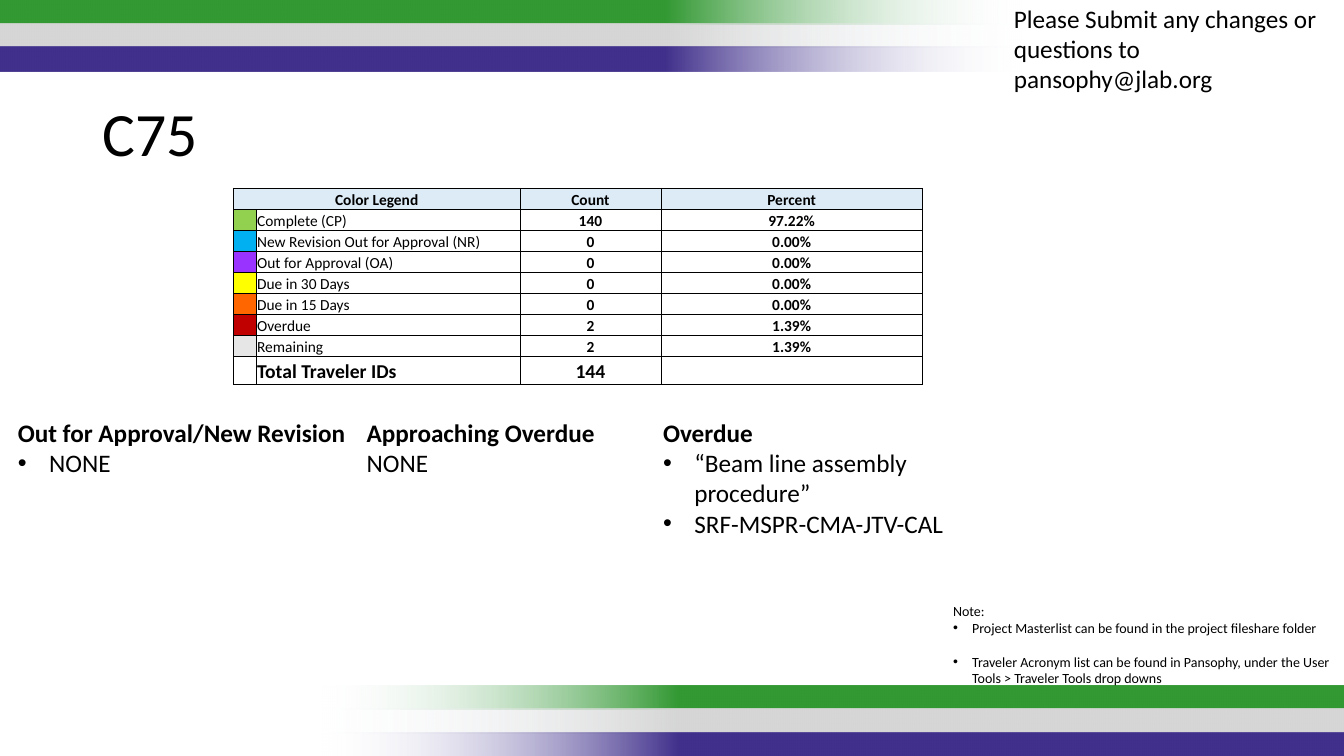
"""Build the C75 traveler status slide."""
from copy import deepcopy
from lxml.etree import SubElement as Sub
from pptx import Presentation
from pptx.dml.color import RGBColor
from pptx.enum.shapes import MSO_SHAPE as Shape
from pptx.enum.text import MSO_ANCHOR as Anchor, MSO_AUTO_SIZE as Auto, PP_ALIGN as Align
from pptx.oxml.ns import qn
from pptx.util import Cm, Pt

BLACK = RGBColor(0x00, 0x00, 0x00)
PALE = RGBColor(0xF7, 0xFA, 0xFD)
GREEN = RGBColor(0x33, 0x99, 0x33)
GREY = RGBColor(0xD6, 0xD6, 0xD6)
INDIGO = RGBColor(0x42, 0x31, 0x8C)
HEAD = RGBColor(0xDD, 0xEB, 0xF7)
LIME = RGBColor(0x92, 0xD0, 0x50)
SKY = RGBColor(0x00, 0xB0, 0xF0)
VIOLET = RGBColor(0x99, 0x33, 0xFF)
YELLOW = RGBColor(0xFF, 0xFF, 0x00)
ORANGE = RGBColor(0xFF, 0x66, 0x00)
RED = RGBColor(0xC0, 0x00, 0x00)
SILVER = RGBColor(0xE7, 0xE6, 0xE6)

LEGEND = [
    (HEAD, "Color Legend", "Count", "Percent"),
    (LIME, "Complete (CP)", "140", "97.22%"),
    (SKY, "New Revision Out for Approval (NR)", "0", "0.00%"),
    (VIOLET, "Out for Approval (OA)", "0", "0.00%"),
    (YELLOW, "Due in 30 Days", "0", "0.00%"),
    (ORANGE, "Due in 15 Days", "0", "0.00%"),
    (RED, "Overdue", "2", "1.39%"),
    (SILVER, "Remaining", "2", "1.39%"),
    (None, "Total Traveler IDs", "144", ""),
]


class Deck:
    """Hold the style and the current slide."""

    font = "Calibri"

    def __init__(self):
        self.prs = Presentation()
        self.prs.slide_width, self.prs.slide_height = Cm(33.87), Cm(19.05)
        self.slide = self.prs.slides.add_slide(self.prs.slide_layouts[6])

    def style(self, para, size, bold=False):
        para.font.name = self.font
        para.font.size = Pt(size)
        para.font.bold = bold
        para.font.color.rgb = BLACK

    def bar(self, left, top, color, turn):
        bar = self.slide.shapes.add_shape(
            Shape.RECTANGLE, Cm(left), Cm(top), Cm(25.83), Cm(0.61))
        bar.shadow.inherit = False
        bar.rotation = turn
        bar.line.fill.background()
        bar.fill.gradient()
        bar.fill.gradient_angle = 0
        for stop, tint, pos in zip(bar.fill.gradient_stops, (PALE, color), (0, 0.35)):
            stop.color.rgb = tint
            stop.position = pos
        fade, solid = bar._element.iter(qn("a:gs"))
        Sub(fade[0], qn("a:alpha"), val="0")
        end = deepcopy(solid)
        end.set("pos", "100000")
        solid.addnext(end)

    def text(self, box, lines, size, dent=0, bold=False, gap=0, grow=True, cols=1):
        """Write lines; those that start with a bullet get a hanging indent."""
        shape = self.slide.shapes.add_textbox(*map(Cm, box))
        frame = shape.text_frame
        frame.word_wrap = True
        if grow:
            frame.auto_size = Auto.SHAPE_TO_FIT_TEXT
        if cols > 1:
            shape._element.txBody.bodyPr.set("numCol", str(cols))
        for i, line in enumerate(lines):
            para = frame.add_paragraph() if i else frame.paragraphs[0]
            para.text = line.removeprefix("•")
            if line.startswith("•"):
                props = para._p.get_or_add_pPr()
                props.set("marL", str(Cm(dent)))
                props.set("indent", str(-Cm(dent)))
                Sub(props, qn("a:buFont"), typeface="Arial")
                Sub(props, qn("a:buChar"), char="•")
            if gap and i == len(lines) - 1:
                para.space_before = Pt(gap)
            self.style(para, size, bold and i == 0)
        return frame

    def title(self, box, line):
        frame = self.text(box, [line], 44, grow=False)
        frame.vertical_anchor = Anchor.MIDDLE
        frame.paragraphs[0].line_spacing = 0.9

    def cell(self, cell, text, size, bold, mid, fill, edges):
        cell.vertical_anchor = Anchor.BOTTOM
        cell.margin_left = cell.margin_right = cell.margin_top = Cm(0.03)
        cell.margin_bottom = 0
        para = cell.text_frame.paragraphs[0]
        para.alignment = Align.CENTER if mid else Align.LEFT
        self.style(para, size, bold)
        if text:
            para.add_run().text = text
        else:
            Sub(para._p, qn("a:endParaRPr"), sz=str(size * 100))
        props = cell._tc.get_or_add_tcPr()
        for side, width in zip("LRTB", edges):
            line = Sub(props, qn("a:ln" + side), w=str(Pt(width)))
            paint = Sub(line, qn("a:solidFill"))
            Sub(paint, qn("a:srgbClr"), val=str(BLACK))
        if fill is None:
            cell.fill.background()
        else:
            cell.fill.solid()
            cell.fill.fore_color.rgb = fill

    def table(self, left, top, widths, rows):
        last = len(rows) - 1
        highs = [0.53] * last + [0.69]
        grid = self.slide.shapes.add_table(
            len(rows), len(widths), Cm(left), Cm(top),
            Cm(sum(widths)), Cm(sum(highs))).table
        grid.first_row = grid.horz_banding = False
        for col, width in zip(grid.columns, widths):
            col.width = Cm(width)
        for r, (color, name, count, share) in enumerate(rows):
            grid.rows[r].height = Cm(highs[r])
            head, total = r == 0, r == last
            texts = (name, "", count, share) if head else ("", name, count, share)
            for c, text in enumerate(texts):
                edges = (0.5 if c else 1, 1 if head and c == 3 else 0.5,
                         1 if head else 0.5, 1 if total else 0.5)
                self.cell(grid.cell(r, c), text, 14 if total and c else 11,
                          head or total or c > 1, head or c > 1,
                          color if head or c == 0 else None, edges)
        grid.cell(0, 0).merge(grid.cell(0, 1))


def main():
    deck = Deck()
    for left, top, turn in ((-0.03, 0, 180), (8.07, 17.27, 0)):
        for i, color in enumerate((GREEN, GREY, INDIGO)):
            deck.bar(left, top + 0.59 * i, color, turn)
    deck.title((2.34, 2.18, 29.21, 2.51), "C75")
    deck.table(5.89, 4.75, (0.56, 6.65, 3.56, 6.58), LEGEND)
    deck.text((0.2, 10.39, 8.76, 1.8),
              ["Out for Approval/New Revision", "•NONE"], 18, 0.79, True)
    deck.text((8.99, 10.39, 7.49, 1.8), ["Approaching Overdue", "NONE"], 18, bold=True)
    deck.text((16.46, 10.39, 15.32, 3.33),
              ["Overdue", "•“Beam line assembly procedure”", "•SRF-MSPR-CMA-JTV-CAL"],
              18, 0.79, True, cols=2)
    deck.text((25.3, -0.05, 8.59, 2.57),
              ["Please Submit any changes or questions to pansophy@jlab.org"], 18)
    deck.text((23.77, 15.06, 10.08, 2.39),
              ["Note:", "•Project Masterlist can be found in the project fileshare folder",
               "•Traveler Acronym list can be found in Pansophy, under the User "
               "Tools > Traveler Tools drop downs"], 10, 0.48, gap=12)
    deck.prs.save("out.pptx")


if __name__ == "__main__":
    main()
